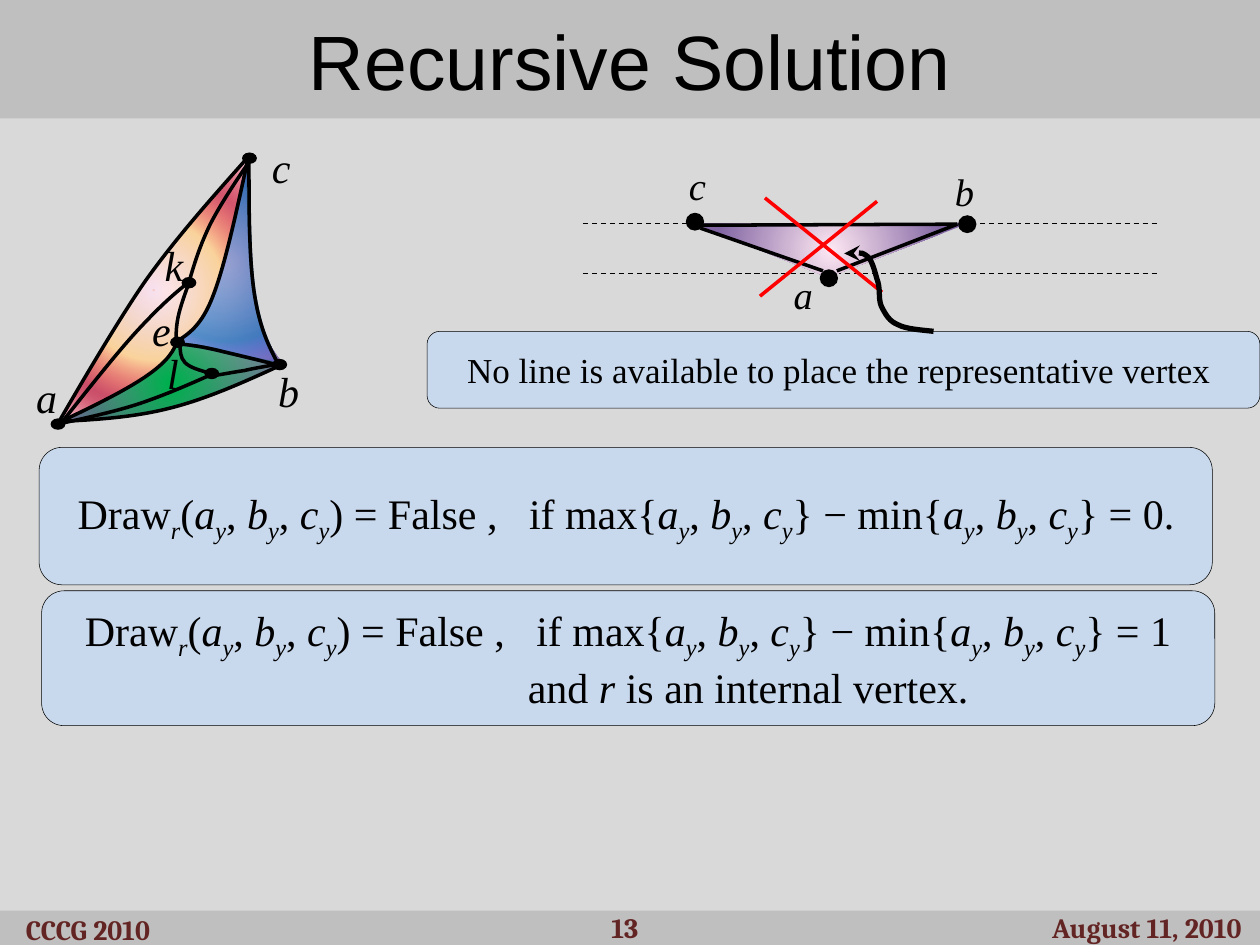
from lxml import etree
from pptx import Presentation
from pptx import util as u
from pptx.dml.color import RGBColor
from pptx.enum import dml, shapes, text
from pptx.oxml import ns

Cm = u.Cm
COLORS = {"page": "D9D9D9", "band": "BFBFBF", "box": "C6D9F1", "ink": "000000",
          "footer": "632523", "cross": "FF0000", "blue_edge": "3A5F8C"}
SERIF, SANS, FOOT = "Times New Roman", "Arial", "Cambria"

# Gradient stops from the centre outwards: position, colour, opacity (percent)
GRADIENTS = {
    "purple": [(0, "FEE7F2", 100), (82, "8064A2", 100)],
    "green": [(0, "00B050", 100), (3, "00B050", 100), (89, "009242", 20), (98, "00602B", 100)],
    "blue": [(0, "0047FF", 33), (1, "558ED5", 42), (69, "0070C0", 60),
             (91, "0047FF", 20), (100, "0000CC", 40)],
    "orange": [(0, "FBA97D", 50), (1, "FEE7F2", 65), (43, "FBD49C", 100),
               (71, "FF2F2F", 53), (100, "FEE7F2", 100)],
}

# Bezier edges in cm, named by their end vertices
EDGES = {
    "ka": [(3.83, 5.67), (3.55, 5.89), (3.28, 6.12), (2.83, 6.6), (2.38, 7.08), (1.8, 7.82), (1.21, 8.56)],
    "ca": [(4.99, 3.18), (4.31, 3.95), (3.62, 4.71), (2.97, 5.61), (2.33, 6.51), (1.18, 8.52), (1.18, 8.52)],
    "ec": [(3.54, 6.9), (3.79, 6.74), (4.07, 6.57), (4.3, 5.95), (4.54, 5.33), (4.77, 4.26), (5, 3.2)],
    "ek": [(3.55, 6.89), (3.55, 6.74), (3.55, 6.6), (3.59, 6.4), (3.63, 6.2), (3.73, 5.92), (3.83, 5.65)],
    "kc": [(3.83, 5.62), (3.93, 5.28), (4.04, 4.93), (4.24, 4.52), (4.45, 4.11), (4.77, 3.63), (5.1, 3.15)],
    "bc": [(5.61, 7.34), (5.42, 6.98), (5.24, 6.63), (5.13, 5.93), (5.02, 5.23), (5.02, 4.22), (5.02, 3.2)],
    "ab": [(1.18, 8.5), (1.93, 8.46), (2.67, 8.42), (3.42, 8.23), (4.18, 8.04), (4.95, 7.69), (5.71, 7.34)],
    "ea": [(3.58, 6.87), (3.5, 7.07), (3.4, 7.26), (3.01, 7.54), (2.61, 7.83), (1.91, 8.18), (1.2, 8.51)],
    "al": [(1.12, 8.56), (1.76, 8.42), (2.41, 8.28), (2.92, 8.1), (3.43, 7.92), (3.81, 7.75), (4.22, 7.57)],
    "be": [(5.6, 7.36), (5.18, 7.25), (4.75, 7.15), (4.42, 7.07), (4.09, 6.99), (3.82, 6.95), (3.56, 6.93)],
    "el": [(3.63, 6.9), (3.63, 7.06), (3.63, 7.21), (3.73, 7.31), (3.83, 7.41), (4.01, 7.46), (4.22, 7.52)],
    "lb": [(4.32, 7.57), (4.53, 7.54), (4.72, 7.5), (4.93, 7.47), (5.13, 7.42), (5.36, 7.39), (5.59, 7.34)],
}
POINTER = [(17.02, 5.11), (17.2, 5.08), (17.37, 5.08), (17.5, 5.18), (17.6, 5.28), (17.65, 5.54),
           (17.7, 5.69), (17.75, 5.87), (17.7, 6.05), (17.78, 6.2), (17.86, 6.35), (17.93, 6.48),
           (18.11, 6.55), (18.26, 6.63), (18.54, 6.65), (18.82, 6.68)]

# Formula pieces: text and style (i italic, s italic subscript)
TRIPLE = [("a", "i"), ("y", "s"), (", ", ""), ("b", "i"), ("y", "s"), (", ", ""), ("c", "i"), ("y", "s")]
DRAW = [("Draw", ""), ("r", "s"), ("(", ""), *TRIPLE, (") = False ,\tif max{", ""), *TRIPLE,
        ("} − min{", ""), *TRIPLE]


def rgb(name):
    return RGBColor.from_string(COLORS[name])


def sub(parent, tag, **attrs):
    return etree.SubElement(parent, ns.qn(tag), attrs)


def style(s, fill=None, line=None, width=2):
    s.shadow.inherit = False
    if fill:
        s.fill.solid()
        s.fill.fore_color.rgb = rgb(fill)
    else:
        s.fill.background()
    if line:
        s.line.color.rgb = rgb(line)
        s.line.width = u.Pt(width)
    else:
        s.line.fill.background()
    return s


def add_block(slide, kind, x, y, w, h, **look):
    return style(slide.shapes.add_shape(kind, Cm(x), Cm(y), Cm(w), Cm(h)), **look)


def add_outline(slide, pts, close=False, curved=True, **look):
    """Outline through pts; when curved, each three points after the first make a cubic."""
    pts = [(Cm(x), Cm(y)) for x, y in pts]
    builder = slide.shapes.build_freeform(*pts[0])
    builder.add_line_segments(pts[1:], close=close)
    s = style(builder.convert_to_shape(), **look)
    if curved:
        segments = s._element.findall(".//" + ns.qn("a:lnTo"))[:len(pts) - 1]
        for i in range(0, len(segments), 3):
            cubic = etree.Element(ns.qn("a:cubicBezTo"))
            segments[i].addprevious(cubic)
            for segment in segments[i:i + 3]:
                cubic.append(segment[0])
                segment.getparent().remove(segment)
    return s


def add_region(slide, pts, gradient, line=None, curved=True):
    s = add_outline(slide, pts, close=True, curved=curved, line=line)
    grad = etree.Element(ns.qn("a:gradFill"), rotWithShape="1")
    stops = sub(grad, "a:gsLst")
    for pos, color, alpha in GRADIENTS[gradient]:
        clr = sub(sub(stops, "a:gs", pos=str(pos * 1000)), "a:srgbClr", val=color)
        sub(clr, "a:alpha", val=str(alpha * 1000))
    center = sub(grad, "a:path")
    center.set("path", "circle")
    sub(center, "a:fillToRect", l="50000", t="50000", r="50000", b="50000")
    old = s._element.spPr.find(ns.qn("a:noFill"))
    old.getparent().replace(old, grad)


def add_line(slide, x1, y1, x2, y2, color="ink", width=2, dash=None):
    s = slide.shapes.add_connector(shapes.MSO_CONNECTOR.STRAIGHT, Cm(x1), Cm(y1), Cm(x2), Cm(y2))
    s.line.color.rgb = rgb(color)
    s.line.width = u.Pt(width)
    if dash:
        s.line.dash_style = dash
    sub(s._element.spPr, "a:effectLst")


def add_dot(slide, x, y, w, h):
    add_block(slide, shapes.MSO_SHAPE.OVAL, x - w / 2, y - h / 2, w, h, fill="ink")


def format_run(r, size, font=SERIF, color="ink", bold=False, italic=False):
    r.font.size, r.font.name, r.font.bold, r.font.italic = u.Pt(size), font, bold, italic
    r.font.color.rgb = rgb(color)


def set_text(s, words, size, **look):
    tf = s.text_frame
    tf.word_wrap = True
    tf.text = words
    tf.vertical_anchor = text.MSO_ANCHOR.MIDDLE
    tf.paragraphs[0].alignment = text.PP_ALIGN.CENTER
    format_run(tf.paragraphs[0].runs[0], size, **look)


def add_label(slide, words, x, y, w, h, size):
    tf = slide.shapes.add_textbox(Cm(x), Cm(y), Cm(w), Cm(h)).text_frame
    tf.word_wrap = False
    tf.text = words
    format_run(tf.paragraphs[0].runs[0], size, italic=True)


def add_box(slide, x, y, w, h):
    s = add_block(slide, shapes.MSO_SHAPE.ROUNDED_RECTANGLE, x, y, w, h, fill="box", line="ink", width=0.3)
    sub(s._element.spPr.find(".//" + ns.qn("a:srgbClr")), "a:alpha", val="84000")
    return s


def add_formula(slide, x, y, w, h, inset, lines):
    """Left-set lines: the first has a tab stop at 'if', later ones are indented."""
    tf = add_box(slide, x, y, w, h).text_frame
    tf.margin_left, tf.margin_right = Cm(inset), 0
    tf.vertical_anchor = text.MSO_ANCHOR.MIDDLE
    for i, pieces in enumerate(lines):
        p = tf.add_paragraph() if i else tf.paragraphs[0]
        p.alignment = text.PP_ALIGN.LEFT
        pPr = p._p.get_or_add_pPr()
        if i:
            pPr.set("marL", str(Cm(8.93)))
        else:
            sub(sub(pPr, "a:tabLst"), "a:tab", pos=str(Cm(9.1)), algn="l")
        for words, kind in pieces:
            r = p.add_run()
            r.text = words
            format_run(r, 24, italic=bool(kind))
            if kind == "s":
                r._r.get_or_add_rPr().set("baseline", "-25000")


def draw_bands(slide):
    rect, rounded = shapes.MSO_SHAPE.RECTANGLE, shapes.MSO_SHAPE.ROUNDED_RECTANGLE
    title = add_block(slide, rect, 0, 0, 25.4, 2.39, fill="band")
    set_text(title, "Recursive Solution", 44, font=SANS)
    add_block(slide, rect, 0, 18.36, 25.4, 0.69, fill="band")
    footer = {"font": FOOT, "color": "footer", "bold": True}
    for words, x, y, w in (("CCCG 2010", -0.84, 18.3, 5.23), ("August 11, 2010", 20.2, 18.25, 5.84)):
        set_text(add_block(slide, rounded, x, y, w, 0.89), words, 16, **footer)
    number = slide.shapes.add_textbox(Cm(10.31), Cm(18.34), Cm(4.45), Cm(0.71))
    set_text(number, " 13", 16, **footer)


def draw_flat_triangle(slide):
    for y in (4.5, 5.51):
        add_line(slide, 11.75, y, 23.37, y, width=0.75, dash=dml.MSO_LINE.DASH)
    add_region(slide, [(13.97, 4.5), (16.69, 5.59), (19.53, 4.5)], "purple", curved=False)
    for x, y in ((16.71, 5.61), (14.01, 4.47), (19.5, 4.52)):
        add_dot(slide, x, y, 0.37, 0.36)
    for ends in ((14.12, 4.6, 16.59, 5.46), (14.15, 4.54, 19.3, 4.52), (16.87, 5.46, 19.3, 4.52)):
        add_line(slide, *ends)
    for words, x, y in (("c", 13.64, 3.15), ("b", 19, 3.26), ("a", 15.75, 5.33)):
        add_label(slide, words, x, y, 0.74, 1.19, 22)
    for ends in ((15.32, 5.97, 17.68, 4.06), (17.78, 5.89, 15.42, 3.99)):
        add_line(slide, *ends, color="cross")


def draw_curved_triangle(slide):
    e = EDGES
    # Filled regions, bounded by the edges
    add_region(slide, e["ab"] + e["bc"][1:] + e["ca"][1:], "purple")
    add_region(slide, e["ab"] + e["be"][1:] + e["ea"][1:], "green")
    add_region(slide, e["ec"] + e["bc"][-2::-1] + e["be"][1:], "blue", line="blue_edge")
    add_region(slide, e["ca"] + e["ea"][-2::-1] + e["ec"][1:], "orange")
    for pts in e.values():
        add_outline(slide, pts, line="ink")
    # Vertices: name, centre of the dot, corner of the label
    for name, x, y, label_x, label_y in (
            ("a", 1.17, 8.55, 0.48, 7.37), ("b", 5.64, 7.35, 5.36, 7.24), ("c", 5.03, 3.19, 5.23, 2.72),
            ("e", 3.58, 6.9, 2.82, 6.02), ("k", 3.81, 5.7, 3.07, 4.7), ("l", 4.27, 7.53, 3.12, 6.88)):
        add_dot(slide, x, y, 0.3, 0.23)
        add_label(slide, name, label_x, label_y, 0.61, 1.3, 24)


def main():
    prs = Presentation()
    prs.slide_width, prs.slide_height = Cm(25.4), Cm(19.05)
    slide = prs.slides.add_slide(prs.slide_layouts[6])
    slide.background.fill.solid()
    slide.background.fill.fore_color.rgb = rgb("page")

    draw_bands(slide)
    draw_flat_triangle(slide)

    # Note with its pointer
    note = add_box(slide, 8.61, 6.68, 16.79, 1.55)
    set_text(note, "No line is available to place the representative vertex ", 20)
    pointer = add_outline(slide, POINTER, line="ink", width=3)
    sub(pointer.line._get_or_add_ln(), "a:headEnd", type="stealth")

    draw_curved_triangle(slide)

    # Recursion base cases
    add_formula(slide, 0.79, 9.02, 23.65, 2.77, 0.64, [DRAW + [("} = 0.", "")]])
    add_formula(slide, 0.84, 11.91, 23.65, 2.72, 0.74, [
        DRAW + [("} = 1", "")], [("and ", ""), ("r", "i"), (" is an internal vertex. ", "")]])
    prs.save("out.pptx")


if __name__ == "__main__":
    main()
